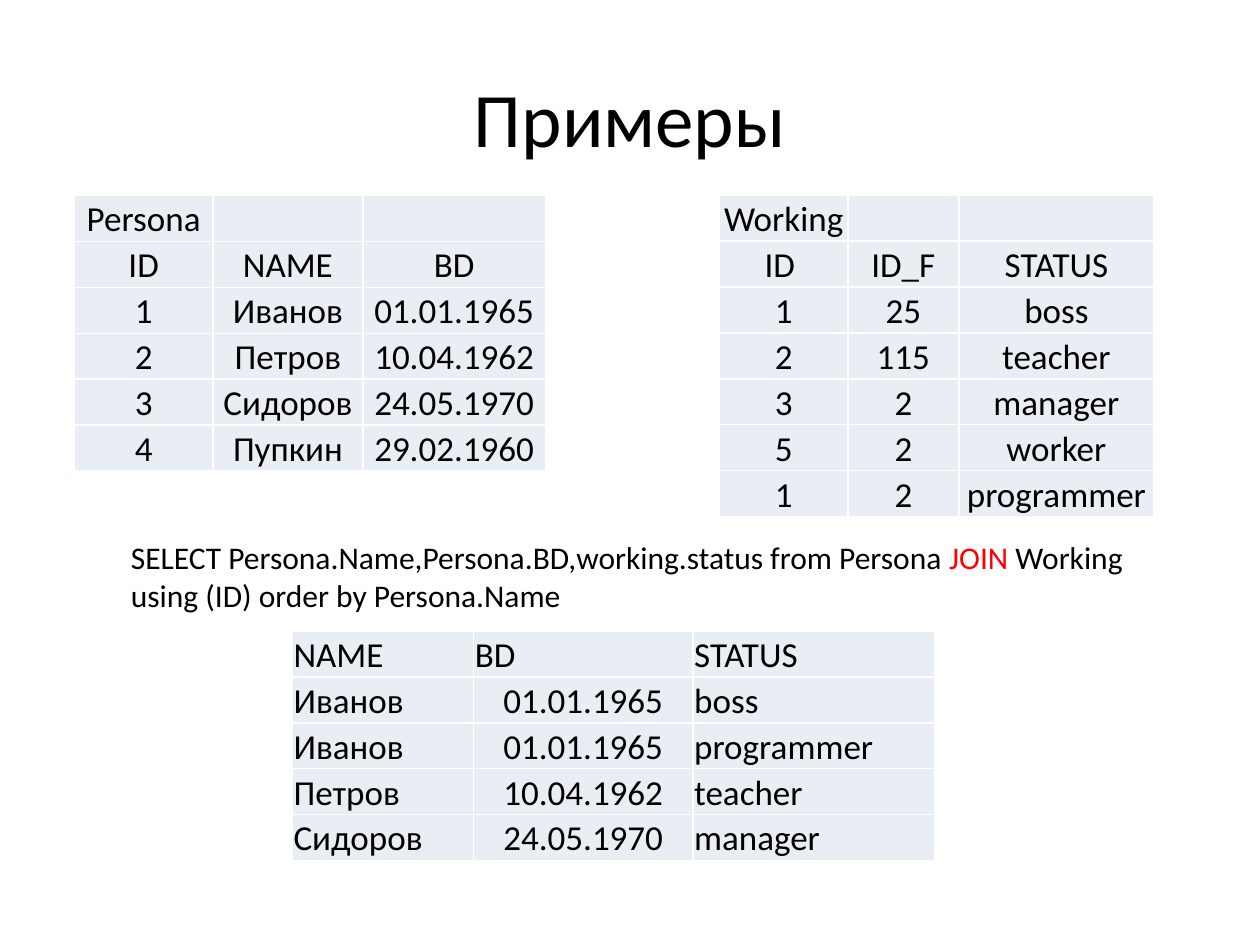
from lxml.etree import SubElement
from pptx import Presentation
from pptx.dml.color import RGBColor
from pptx.enum.text import MSO_ANCHOR, MSO_AUTO_SIZE, PP_ALIGN
from pptx.oxml.ns import qn
from pptx.util import Inches, Pt

COLORS = {"text": "000000", "keyword": "FF0000", "cell": "E9EDF4", "border": "FFFFFF"}
FONT = "Calibri"
CELL_FORMAT = {
    "vertical_anchor": MSO_ANCHOR.BOTTOM,
    "margin_left": Inches(0.01),
    "margin_right": Inches(0.01),
    "margin_top": Inches(0.01),
    "margin_bottom": 0,
}

PERSONA = [
    ["Persona", "", ""],
    ["ID", "NAME", "BD"],
    ["1", "Иванов", "01.01.1965"],
    ["2", "Петров", "10.04.1962"],
    ["3", "Сидоров", "24.05.1970"],
    ["4", "Пупкин", "29.02.1960"],
]
WORKING = [
    ["Working", "", ""],
    ["ID ", "ID_F", "STATUS"],
    ["1", "25", "boss"],
    ["2", "115", "teacher"],
    ["3", "2", "manager"],
    ["5", "2", "worker"],
    ["1", "2", "programmer"],
]
JOINED = [
    ["NAME", "BD", "STATUS"],
    ["Иванов", "01.01.1965", "boss"],
    ["Иванов", "01.01.1965", "programmer"],
    ["Петров", "10.04.1962", "teacher"],
    ["Сидоров", "24.05.1970", "manager"],
]
QUERY = [
    [("SELECT Persona.Name,Persona.BD,working.status from Persona ", "text"),
     ("JOIN ", "keyword"), ("Working", "text")],
    [("using (ID) order by Persona.Name", "text")],
]


def add_run(paragraph, text, size, color="text"):
    run = paragraph.add_run()
    run.text = text
    run.font.name = FONT
    run.font.size = Pt(size)
    run.font.color.rgb = RGBColor.from_string(COLORS[color])


def add_title(slide, box, text):
    frame = slide.shapes.add_textbox(*map(Inches, box)).text_frame
    frame.word_wrap = True
    frame.vertical_anchor = MSO_ANCHOR.MIDDLE
    frame.paragraphs[0].alignment = PP_ALIGN.CENTER
    add_run(frame.paragraphs[0], text, 44)


def add_query(slide, box, lines):
    frame = slide.shapes.add_textbox(*map(Inches, box)).text_frame
    frame.word_wrap = False
    frame.auto_size = MSO_AUTO_SIZE.SHAPE_TO_FIT_TEXT
    for index, line in enumerate(lines):
        paragraph = frame.add_paragraph() if index else frame.paragraphs[0]
        for text, color in line:
            add_run(paragraph, text, 18, color)


def add_borders(cell):
    properties = cell._tc.get_or_add_tcPr()
    for side in ("a:lnL", "a:lnR", "a:lnT", "a:lnB"):
        line = SubElement(properties, qn(side), w=str(Pt(1)))
        fill = SubElement(line, qn("a:solidFill"))
        SubElement(fill, qn("a:srgbClr"), val=COLORS["border"])


def add_data_table(slide, box, widths, rows, centered=True):
    """Centre every cell, or only those that hold dates and numbers."""
    table = slide.shapes.add_table(len(rows), len(widths), *map(Inches, box)).table
    for column, width in zip(table.columns, widths):
        column.width = Inches(width)
    for r, values in enumerate(rows):
        table.rows[r].height = Inches(box[3] / len(rows))
        for c, text in enumerate(values):
            cell = table.cell(r, c)
            for name, value in CELL_FORMAT.items():
                setattr(cell, name, value)
            add_borders(cell)
            cell.fill.solid()
            cell.fill.fore_color.rgb = RGBColor.from_string(COLORS["cell"])
            paragraph = cell.text_frame.paragraphs[0]
            if centered or text[:1].isdigit():
                paragraph.alignment = PP_ALIGN.CENTER
            if text:
                add_run(paragraph, text, 20)


def main():
    deck = Presentation()
    deck.slide_width, deck.slide_height = Inches(10), Inches(7.5)
    slide = deck.slides.add_slide(deck.slide_layouts[6])

    add_title(slide, (0.5, 0.3, 9, 1.25), "Примеры")

    # Source tables
    add_data_table(slide, (0.59, 1.55, 3.74, 2.19), (1.1, 1.19, 1.45), PERSONA)
    add_data_table(slide, (5.71, 1.55, 3.45, 2.55), (1.02, 0.88, 1.55), WORKING)

    # Query and its result
    add_query(slide, (0.94, 4.22, 8.15, 0.71), QUERY)
    add_data_table(slide, (2.32, 5.01, 5.1, 1.82), (1.44, 1.74, 1.92), JOINED, centered=False)

    deck.save("out.pptx")


if __name__ == "__main__":
    main()
